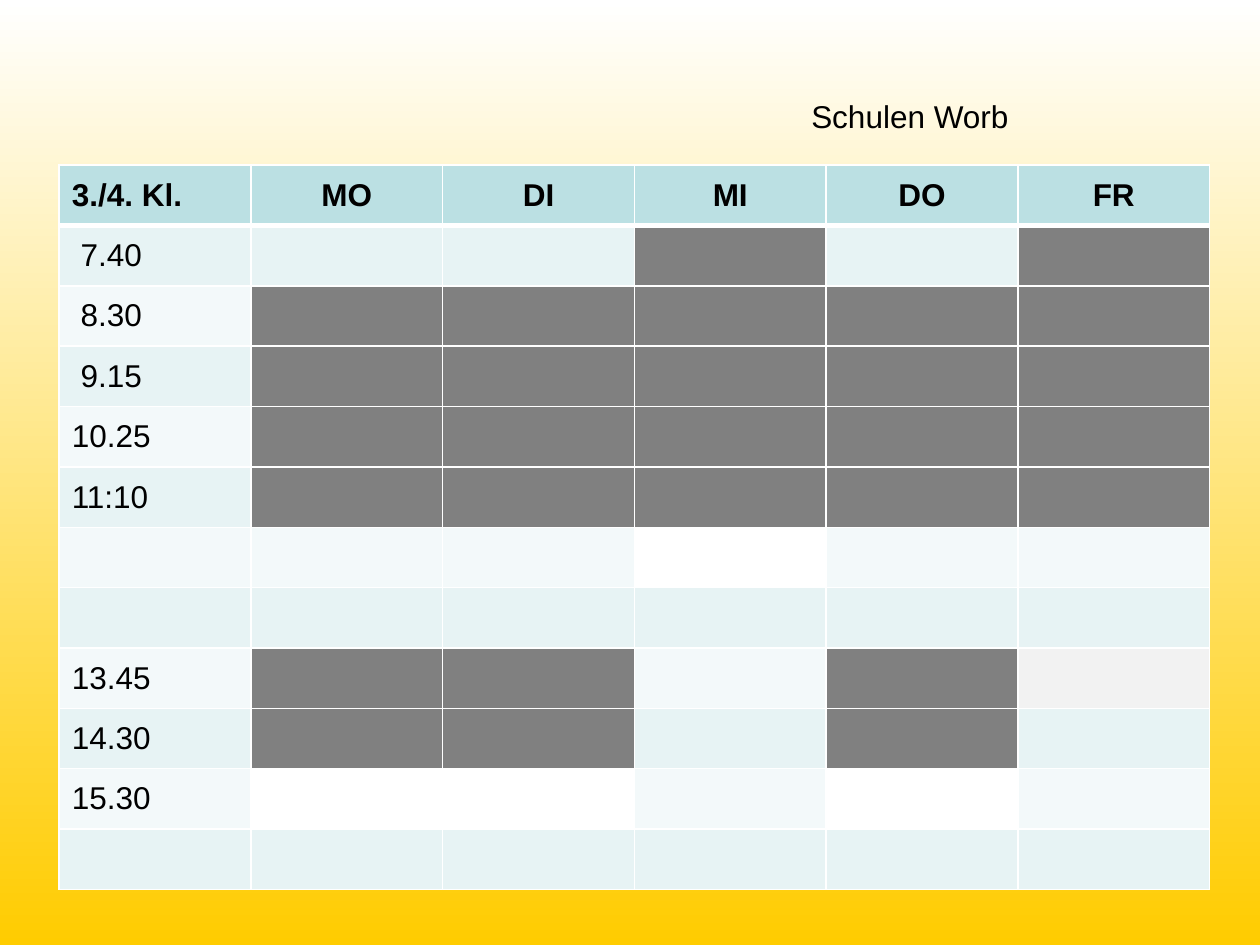
import dataclasses

import lxml.etree
import pptx
import pptx.dml.color
import pptx.enum.text
import pptx.oxml.ns
import pptx.util

WIDTH, HEIGHT = 10, 7.5
FONT, SIZE = "Arial", 18
COLORS = {
    "top": "FFFFFF", "bottom": "FFCC00", "text": "000000", "border": "FFFFFF",
    "header": "BBE0E3", "odd": "E7F3F4", "even": "F3F9FA",
    "lesson": "808080", "blank": "FFFFFF", "pale": "F2F2F2",
}
# Marks in a row's day pattern; "." keeps the band colour
MARKS = {"x": "lesson", "o": "blank", "p": "pale"}
DAYS = ["MO", "DI", "MI", "DO", "FR"]
ALIGN = pptx.enum.text.PP_ALIGN


@dataclasses.dataclass
class Lesson:
    time: str
    days: str


LESSONS = [
    Lesson(" 7.40", "..x.x"),
    Lesson(" 8.30", "xxxxx"),
    Lesson(" 9.15", "xxxxx"),
    Lesson("10.25", "xxxxx"),
    Lesson("11:10", "xxxxx"),
    Lesson("", "..o.."),
    Lesson("", "....."),
    Lesson("13.45", "xx.xp"),
    Lesson("14.30", "xx.x."),
    Lesson("15.30", "oo.o."),
    Lesson("", "....."),
]


def color(name: str) -> pptx.dml.color.RGBColor:
    return pptx.dml.color.RGBColor.from_string(COLORS[name])


def write(frame, text: str, *, bold: bool = False, align=ALIGN.LEFT) -> None:
    para = frame.paragraphs[0]
    para.alignment = align
    para.font.size = pptx.util.Pt(SIZE)
    if text:
        span = para.add_run()
        span.text = text
        span.font.name, span.font.size = FONT, pptx.util.Pt(SIZE)
        span.font.bold = bold
        span.font.color.rgb = color("text")


def add_borders(cell, widths: dict[str, float]) -> None:
    properties = cell._tc.get_or_add_tcPr()
    qn = pptx.oxml.ns.qn
    for side, width in widths.items():
        line = lxml.etree.SubElement(properties, qn(f"a:ln{side}"), w=str(pptx.util.Pt(width)))
        fill = lxml.etree.SubElement(line, qn("a:solidFill"))
        lxml.etree.SubElement(fill, qn("a:srgbClr"), val=COLORS["border"])


def fill_cell(cell, text: str, fill: str, *, top: float = 1, bottom: float = 1,
              bold: bool = False, align=ALIGN.LEFT) -> None:
    # Borders come before the fill in the cell properties
    add_borders(cell, {"L": 1, "R": 1, "T": top, "B": bottom})
    cell.fill.solid()
    cell.fill.fore_color.rgb = color(fill)
    cell.vertical_anchor = pptx.enum.text.MSO_ANCHOR.MIDDLE
    write(cell.text_frame, text, bold=bold, align=align)


def paint_background(page) -> None:
    fill = page.background.fill
    fill.gradient()
    fill.gradient_angle = 270
    for stop, name, position in zip(fill.gradient_stops, ("top", "bottom"), (0, 1)):
        stop.color.rgb = color(name)
        stop.position = position


def add_label(page, text: str) -> None:
    box = page.shapes.add_textbox(*map(pptx.util.Inches, (6.34, 0.72, 1.89, 0.4)))
    box.text_frame.word_wrap = True
    write(box.text_frame, text)


def add_timetable(page) -> None:
    frame = page.shapes.add_table(len(LESSONS) + 1, len(DAYS) + 1,
                                  *map(pptx.util.Inches, (0.47, 1.31, 9.13, 5.75)))
    table = frame.table

    # Header row
    fill_cell(table.cell(0, 0), "3./4. Kl.", "header", bottom=3, bold=True)
    for column, day in enumerate(DAYS, 1):
        fill_cell(table.cell(0, column), day, "header", bottom=3, bold=True, align=ALIGN.CENTER)

    # Times and lessons
    for row, lesson in enumerate(LESSONS, 1):
        band = "odd" if row % 2 else "even"
        top = 3 if row == 1 else 1
        fill_cell(table.cell(row, 0), lesson.time, band, top=top)
        for column, mark in enumerate(lesson.days, 1):
            fill_cell(table.cell(row, column), "", MARKS.get(mark, band), top=top)


def main() -> None:
    deck = pptx.Presentation()
    deck.slide_width = pptx.util.Inches(WIDTH)
    deck.slide_height = pptx.util.Inches(HEIGHT)
    page = deck.slides.add_slide(deck.slide_layouts[6])
    paint_background(page)
    add_label(page, "Schulen Worb")
    add_timetable(page)
    deck.save("out.pptx")


if __name__ == "__main__":
    main()
